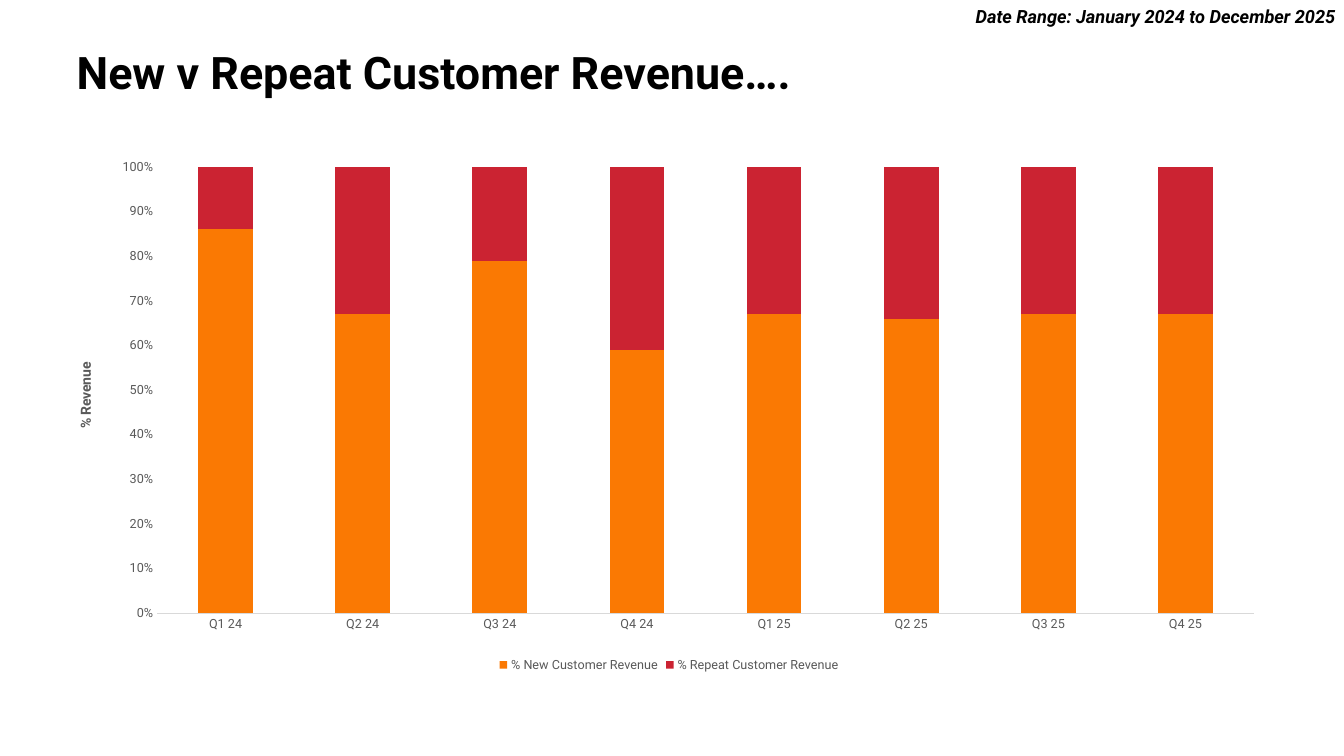
import dataclasses

import pptx
import pptx.chart.data
import pptx.dml.color
import pptx.enum.chart
import pptx.enum.text
import pptx.oxml
import pptx.oxml.ns
import pptx.util

PX = 9144  # 100 px to the inch


@dataclasses.dataclass(frozen=True)
class Theme:
    face: str = "Roboto"
    ink: str = "000000"
    label: str = "595959"
    rule: str = "D9D9D9"
    new: str = "FA7903"
    repeat: str = "CB2332"
    title_size: int = 32
    range_size: int = 13
    axis_title_size: int = 10
    label_size: int = 9


THEME = Theme()
QUARTERS = [f"Q{quarter} {year}" for year in (24, 25) for quarter in range(1, 5)]
NEW_SHARES = [0.86, 0.67, 0.79, 0.59, 0.67, 0.66, 0.67, 0.67]
REVENUE = [
    ("% New Customer Revenue", NEW_SHARES, THEME.new),
    ("% Repeat Customer Revenue", [round(1 - share, 2) for share in NEW_SHARES], THEME.repeat),
]


def emu(box):
    return [length * PX for length in box]


def rgb(code):
    return pptx.dml.color.RGBColor.from_string(code)


def style_font(font, size, colour, bold=False, italic=False):
    font.name = THEME.face
    font.size = pptx.util.Pt(size)
    font.bold = bold
    font.italic = italic
    font.color.rgb = rgb(colour)


def place_title(page, box, text):
    title = page.shapes.title
    title.left, title.top, title.width, title.height = emu(box)
    frame = title.text_frame
    frame.margin_left = frame.margin_top = frame.margin_right = frame.margin_bottom = 0
    frame.vertical_anchor = pptx.enum.text.MSO_ANCHOR.MIDDLE
    frame.auto_size = pptx.enum.text.MSO_AUTO_SIZE.NONE
    para = frame.paragraphs[0]
    para.text = text
    para.alignment = pptx.enum.text.PP_ALIGN.LEFT
    para.line_spacing = 0.9
    style_font(para.font, THEME.title_size, THEME.ink, bold=True)


def add_date_range(page, box, text):
    frame = page.shapes.add_textbox(*emu(box)).text_frame
    frame.word_wrap = True
    para = frame.paragraphs[0]
    para.text = text
    para.alignment = pptx.enum.text.PP_ALIGN.RIGHT
    style_font(para.font, THEME.range_size, THEME.ink, bold=True, italic=True)


def fix_plot_area(chart, x, y, w, h):
    """Pin the inner plot area, in fractions of the chart."""
    area = chart.plots[0]._element.getparent()
    for layout in area.findall(pptx.oxml.ns.qn("c:layout")):
        area.remove(layout)
    values = {"layoutTarget": "inner", "xMode": "edge", "yMode": "edge",
              "x": x, "y": y, "w": w, "h": h}
    settings = "".join(f'<c:{tag} val="{value}"/>' for tag, value in values.items())
    area.insert(0, pptx.oxml.parse_xml(
        f'<c:layout {pptx.oxml.ns.nsdecls("c")}><c:manualLayout>{settings}'
        "</c:manualLayout></c:layout>"))


def style_axis(axis):
    axis.has_major_gridlines = False
    axis.major_tick_mark = axis.minor_tick_mark = pptx.enum.chart.XL_TICK_MARK.NONE
    style_font(axis.tick_labels.font, THEME.label_size, THEME.label)


def add_revenue_chart(page, box):
    data = pptx.chart.data.CategoryChartData(number_format="0%")
    data.categories = QUARTERS
    for name, shares, _ in REVENUE:
        data.add_series(name, shares)
    chart = page.shapes.add_chart(
        pptx.enum.chart.XL_CHART_TYPE.COLUMN_STACKED, *emu(box), data).chart
    chart.has_title = False
    style_font(chart.font, THEME.axis_title_size, THEME.ink)

    plot = chart.plots[0]
    plot.gap_width = 150
    plot.overlap = 100
    plot.vary_by_categories = False
    for series, (_, _, colour) in zip(plot.series, REVENUE):
        series.format.fill.solid()
        series.format.fill.fore_color.rgb = rgb(colour)

    quarters, shares = chart.category_axis, chart.value_axis
    style_axis(quarters)
    quarters.format.line.color.rgb = rgb(THEME.rule)
    quarters.format.line.width = pptx.util.Pt(0.75)
    style_axis(shares)
    shares.format.line.fill.background()
    shares.minimum_scale, shares.maximum_scale, shares.major_unit = 0, 1, 0.1
    shares.tick_labels.number_format = "0%"
    shares.tick_labels.number_format_is_linked = False
    para = shares.axis_title.text_frame.paragraphs[0]
    para.text = "% Revenue"
    style_font(para.font, THEME.axis_title_size, THEME.label, bold=True)

    chart.has_legend = True
    chart.legend.position = pptx.enum.chart.XL_LEGEND_POSITION.BOTTOM
    chart.legend.include_in_layout = False
    style_font(chart.legend.font, THEME.label_size, THEME.label)
    fix_plot_area(chart, 0.08, 0.03, 0.9, 0.85)


def build_revenue_page(deck):
    page = deck.slides.add_slide(deck.slide_layouts.get_by_name("Title Only"))
    place_title(page, (76, 41, 1181, 67), "New v Repeat Customer Revenue….")
    add_date_range(page, (940, 0, 394, 32), "Date Range: January 2024 to December 2025")
    add_revenue_chart(page, (59, 150, 1209, 521))


def main():
    deck = pptx.Presentation()
    deck.slide_width, deck.slide_height = emu((1333, 750))
    build_revenue_page(deck)
    deck.save("out.pptx")


if __name__ == "__main__":
    main()
